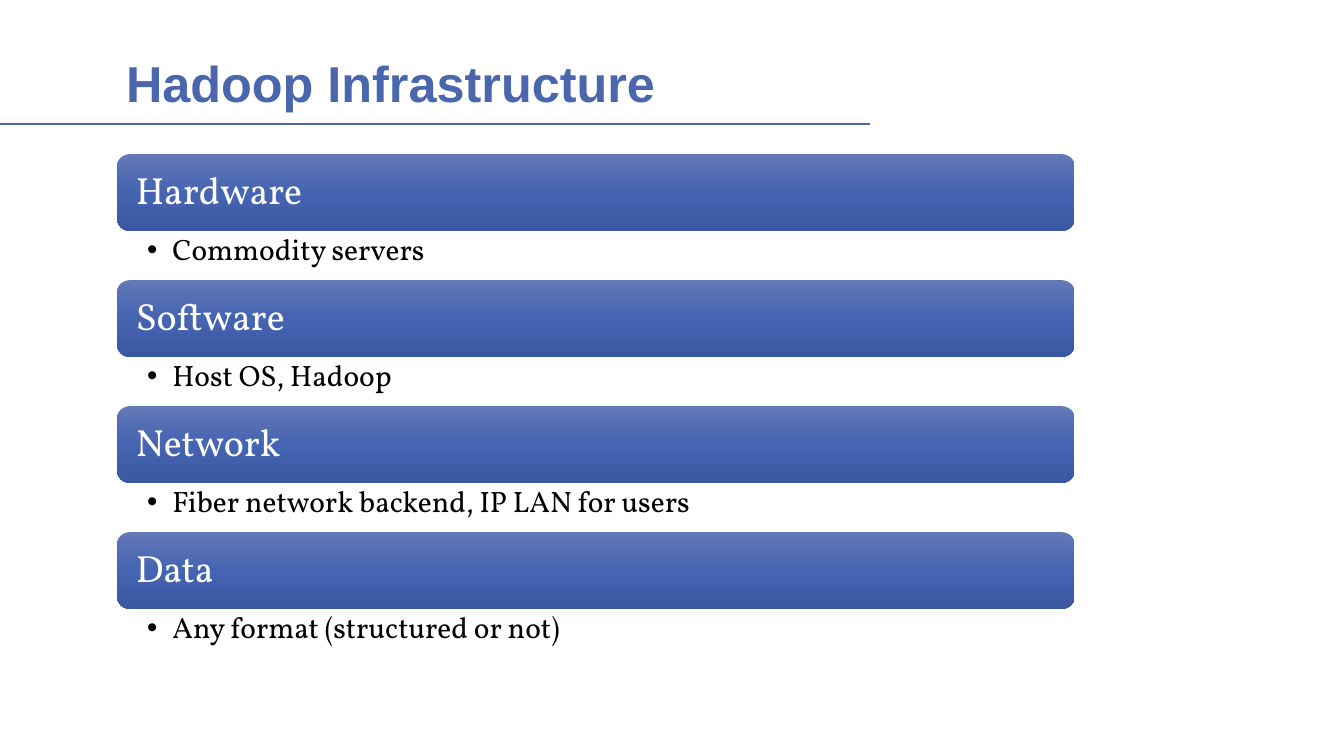
from copy import deepcopy

from pptx import Presentation
from pptx.dml.color import RGBColor
from pptx.enum.shapes import MSO_CONNECTOR as Connector, MSO_SHAPE as Shape
from pptx.enum.text import MSO_ANCHOR as Anchor, PP_ALIGN as Align
from pptx.oxml.ns import qn
from pptx.util import Pt
from lxml.etree import SubElement

PX = 9144
COLORS = {
    "accent": "4A66AC",
    "bar_top": "6378B7",
    "bar_middle": "4564B1",
    "bar_bottom": "3957A2",
    "bar_text": "FFFFFF",
    "detail": "000000",
}
TOPICS = [
    ("Hardware", "Commodity servers"),
    ("Software", "Host OS, Hadoop"),
    ("Network", "Fiber network backend, IP LAN for users"),
    ("Data", "Any format (structured or not)"),
]


def px(*lengths):
    return [length * PX for length in lengths]


def color(name):
    return RGBColor.from_string(COLORS[name])


def write(frame, text, font_name, size, color_name, insets, anchor):
    frame.word_wrap = True
    frame.vertical_anchor = anchor
    (frame.margin_left, frame.margin_top,
     frame.margin_right, frame.margin_bottom) = px(*insets)
    paragraph = frame.paragraphs[0]
    paragraph.alignment = Align.LEFT
    run = paragraph.add_run()
    run.text = text
    run.font.name = font_name
    run.font.size = Pt(size)
    run.font.color.rgb = color(color_name)
    return paragraph


def add_heading(slide, text, left, top, width, height):
    title = slide.shapes.title
    title.left, title.top, title.width, title.height = px(left, top, width, height)
    heading = write(title.text_frame, text, "Arial", 36, "accent",
                    (10, 5, 10, 5), Anchor.BOTTOM)
    heading.runs[0].font.bold = True
    rule = slide.shapes.add_connector(
        Connector.STRAIGHT, *px(-11, top + height + 6, 863, top + height + 6))
    rule.line.color.rgb = color("accent")
    rule.line.width = Pt(1.5)
    SubElement(rule._element.spPr, qn("a:effectLst"))


def fill_gradient(bar):
    bar.fill.gradient()
    bar.fill.gradient_angle = 270
    stop_list = bar._element.spPr.find(".//" + qn("a:gsLst"))
    stop_list.insert(1, deepcopy(stop_list[0]))
    shades = ("bar_top", "bar_middle", "bar_bottom")
    for index, (stop, shade) in enumerate(zip(bar.fill.gradient_stops, shades)):
        stop.position = index / 2
        stop.color.rgb = color(shade)


def add_topic(slide, topic, detail, left, top, width, bar_height, detail_height):
    bar = slide.shapes.add_shape(
        Shape.ROUNDED_RECTANGLE, *px(left, top, width, bar_height))
    bar.shadow.inherit = False
    bar.line.fill.background()
    fill_gradient(bar)
    label = write(bar.text_frame, topic, "Vollkorn", 27, "bar_text",
                  (15, 11, 15, 11), Anchor.MIDDLE)
    label.line_spacing = 0.9

    detail_box = slide.shapes.add_textbox(
        *px(left, top + bar_height, width, detail_height))
    item = write(detail_box.text_frame, detail, "Vollkorn", 21, "detail",
                 (30, 4, 21, 4), Anchor.TOP)
    item.level = 1
    item.line_spacing = 0.9
    properties = item._p.get_or_add_pPr()
    properties.set("marL", str(25 * PX))
    properties.set("indent", str(-25 * PX))
    SubElement(properties, qn("a:buFont"), typeface="Arial")
    SubElement(properties, qn("a:buChar"), char="•")


def add_topics(slide, left, top, width, height):
    pitch = height // len(TOPICS)
    bar_height = 76
    for index, (topic, detail) in enumerate(TOPICS):
        add_topic(slide, topic, detail, left, top + index * pitch,
                  width, bar_height, pitch - bar_height)


def main():
    deck = Presentation()
    deck.slide_width, deck.slide_height = px(1333, 750)
    slide = deck.slides.add_slide(deck.slide_layouts[5])
    add_heading(slide, "Hadoop Infrastructure", 115, 44, 950, 73)
    add_topics(slide, 116, 153, 950, 500)
    deck.save("out.pptx")


if __name__ == "__main__":
    main()
